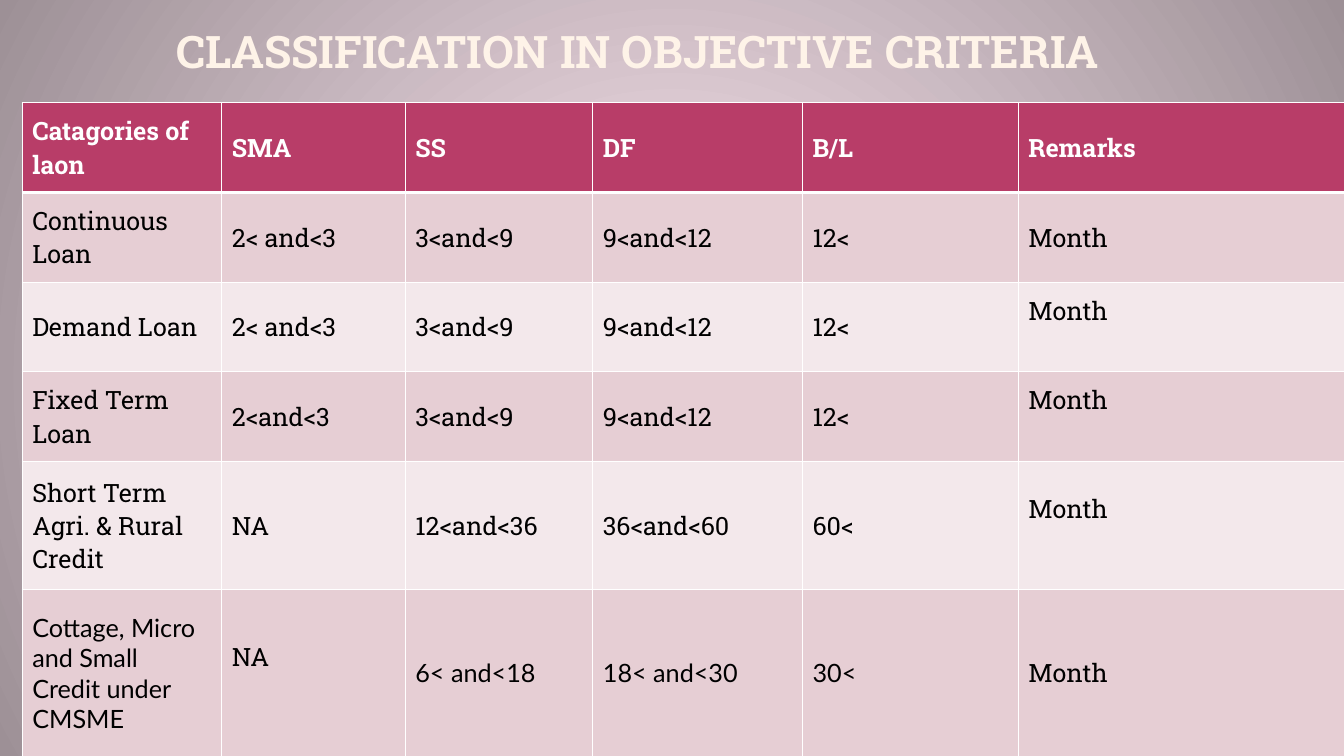
import pptx
import pptx.dml.color
import pptx.enum.text
import pptx.oxml
import pptx.oxml.ns
import pptx.util

SLIDE_W, SLIDE_H = 13.33, 7.5
COLORS = {
    "glow": "FCE7F1", "edge": "9D9096", "title": "FEF3E8",
    "header": "B83D68", "band_dark": "E6CED4", "band_light": "F3E8EB",
    "white": "FFFFFF", "black": "000000",
}
SLAB, SANS = "Roboto Slab", "Lato"
COL_WIDTHS = [1.98, 1.82, 1.86, 2.08, 2.14, 3.24]
ROW_HEIGHTS = [0.89] * 4 + [1.27, 1.66]
CRITERIA = [
    ["Catagories of laon", "SMA", "SS", "DF", "B/L", "Remarks"],
    ["Continuous Loan", "2< and<3", "3<and<9", "9<and<12", "12<", "Month"],
    ["Demand Loan", "2< and<3", "3<and<9", "9<and<12", "12<", "Month"],
    ["Fixed Term Loan", "2<and<3", "3<and<9", "9<and<12", "12<", "Month"],
    ["Short Term Agri. & Rural Credit", "NA", "12<and<36", "36<and<60", "60<", "Month"],
    ["Cottage, Micro and Small Credit under CMSME", "NA", "6< and<18", "18< and<30",
     "30<", "Month"],
]
SANS_CELLS = {(5, 0), (5, 2), (5, 3), (5, 4)}
RAISED_CELLS = {(2, 5), (3, 5), (4, 5), (5, 1)}


def rgb(name):
    return pptx.dml.color.RGBColor.from_string(COLORS[name])


def add_run(p, text, size, font, color, bold=False):
    r = p.add_run()
    r.text = text
    r.font.size = pptx.util.Pt(size)
    r.font.name = font
    r.font.bold = bold
    r.font.color.rgb = rgb(color)


def set_background(slide):
    """Fill the slide with a circular gradient spreading from its centre."""
    fill = slide.background.fill
    fill.gradient()
    for stop, name in zip(fill.gradient_stops, ("glow", "edge")):
        stop.color.rgb = rgb(name)
    grad = slide.background._cSld.find(".//" + pptx.oxml.ns.qn("a:gradFill"))
    lin = grad.find(pptx.oxml.ns.qn("a:lin"))
    circle = pptx.oxml.parse_xml(
        f'<a:path {pptx.oxml.ns.nsdecls("a")} path="circle">'
        '<a:fillToRect l="50000" t="50000" r="50000" b="50000"/></a:path>')
    grad.replace(lin, circle)


def set_title(slide, text):
    sp = slide.shapes.title
    sp.left, sp.top = pptx.util.Inches(0.75), 0
    sp.width, sp.height = pptx.util.Inches(11.08), pptx.util.Inches(1)
    tf = sp.text_frame
    tf.word_wrap = True
    tf.auto_size = pptx.enum.text.MSO_AUTO_SIZE.NONE
    tf.vertical_anchor = pptx.enum.text.MSO_ANCHOR.MIDDLE
    tf.margin_left, tf.margin_right = pptx.util.Inches(0.13), pptx.util.Inches(0.05)
    tf.margin_top = tf.margin_bottom = 0
    p = tf.paragraphs[0]
    p.alignment = pptx.enum.text.PP_ALIGN.CENTER
    add_run(p, text, 32, SLAB, "title", bold=True)


def set_borders(cell, widths):
    """Draw white cell borders; widths maps the sides L, R, T, B to points."""
    tc_pr = cell._tc.get_or_add_tcPr()
    for side, width in widths.items():
        tc_pr.append(pptx.oxml.parse_xml(
            f'<a:ln{side} {pptx.oxml.ns.nsdecls("a")} w="{pptx.util.Pt(width)}">'
            f'<a:solidFill><a:srgbClr val="{COLORS["white"]}"/></a:solidFill></a:ln{side}>'))


def format_cell(cell, row, col, text):
    header = row == 0
    set_borders(cell, {"L": 1, "R": 1, "T": 3 if row == 1 else 1, "B": 3 if header else 1})
    cell.fill.solid()
    band = "band_dark" if row % 2 else "band_light"
    cell.fill.fore_color.rgb = rgb("header" if header else band)
    cell.vertical_anchor = pptx.enum.text.MSO_ANCHOR.MIDDLE
    if (row, col) in RAISED_CELLS:
        cell.margin_bottom = pptx.util.Inches(0.38)
    font = SANS if (row, col) in SANS_CELLS else SLAB
    add_run(cell.text_frame.paragraphs[0], text, 18, font,
            "white" if header else "black", bold=header)


def add_criteria_table(slide):
    width, height = sum(COL_WIDTHS), sum(ROW_HEIGHTS)
    frame = slide.shapes.add_table(
        len(ROW_HEIGHTS), len(COL_WIDTHS),
        *map(pptx.util.Inches, (0.22, 1.02, width, height)))
    table = frame.table
    for column, w in zip(table.columns, COL_WIDTHS):
        column.width = pptx.util.Inches(w)
    for table_row, h in zip(table.rows, ROW_HEIGHTS):
        table_row.height = pptx.util.Inches(h)
    for row, texts in enumerate(CRITERIA):
        for col, text in enumerate(texts):
            format_cell(table.cell(row, col), row, col, text)


def main():
    prs = pptx.Presentation()
    prs.slide_width = pptx.util.Inches(SLIDE_W)
    prs.slide_height = pptx.util.Inches(SLIDE_H)
    slide = prs.slides.add_slide(prs.slide_layouts[5])
    set_background(slide)
    set_title(slide, "CLASSIFICATION IN OBJECTIVE CRITERIA")
    add_criteria_table(slide)
    prs.save("out.pptx")


if __name__ == "__main__":
    main()
